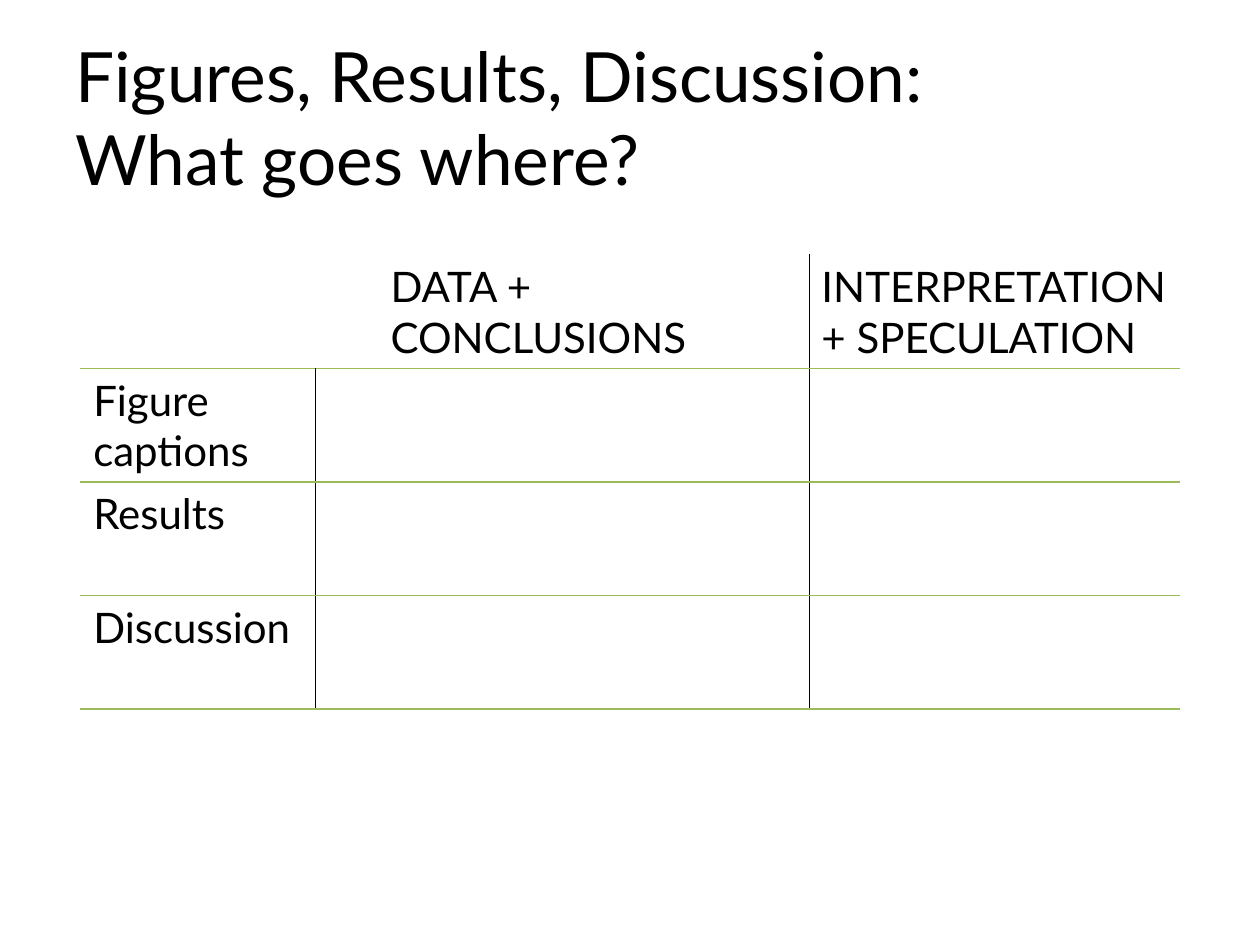
from lxml import etree
from pptx import Presentation
from pptx import util as u
from pptx.dml import color
from pptx.enum import text
from pptx.oxml import ns

WHITE, BLACK, GREEN = "FFFFFF", "000000", "9BBB59"
LETTERING = {"name": "Lato", "bold": False}


def style(font, size):
    for key, value in {**LETTERING, "size": u.Pt(size)}.items():
        setattr(font, key, value)
    font.color.rgb = color.RGBColor.from_string(BLACK)


def add_border(cell, position, side, hue, points):
    properties = cell._tc.get_or_add_tcPr()
    line = etree.Element(ns.qn(f"a:ln{side}"), w=str(u.Pt(points)))
    fill = etree.SubElement(line, ns.qn("a:solidFill"))
    etree.SubElement(fill, ns.qn("a:srgbClr"), val=hue)
    properties.insert(position, line)


deck = Presentation()
deck.slide_width, deck.slide_height = u.Inches(10), u.Inches(7.5)
W, H = deck.slide_width, deck.slide_height
slide = deck.slides.add_slide(deck.slide_layouts[6])

heading = slide.shapes.add_textbox(
    int(W * 0.05), int(H * 0.04), int(W * 0.9), int(H / 6)
).text_frame
for key, value in {"word_wrap": True, "vertical_anchor": text.MSO_ANCHOR.MIDDLE}.items():
    setattr(heading, key, value)
heading.text = "Figures, Results, Discussion:\vWhat goes where?"
style(heading.paragraphs[0].font, 39.6)

sections = [
    ["", "DATA + CONCLUSIONS", "INTERPRETATION + SPECULATION"],
    ["Figure captions", "", ""],
    ["Results", "", ""],
    ["Discussion", "", ""],
]
column_shares = [0.186, 0.392, 0.294]
row_share = 0.12
last_row, last_column = len(sections) - 1, len(column_shares) - 1

matrix = slide.shapes.add_table(
    len(sections), len(column_shares),
    int(W * 0.064), int(H * 0.27),
    int(W * sum(column_shares)), int(H * row_share * len(sections)),
).table
for flag in ("first_row", "horz_banding"):
    setattr(matrix, flag, False)
for column, share in zip(matrix.columns, column_shares):
    column.width = int(W * share)

for r, labels in enumerate(sections):
    matrix.rows[r].height = int(H * row_share)
    for c, label in enumerate(labels):
        cell = matrix.cell(r, c)
        cell.text = label
        style(cell.text_frame.paragraphs[0].font, 24)
        cell.vertical_anchor = text.MSO_ANCHOR.TOP if r else text.MSO_ANCHOR.MIDDLE
        if r == 0 or c == 0:
            cell.fill.solid()
            cell.fill.fore_color.rgb = color.RGBColor.from_string(WHITE)
        else:
            cell.fill.background()
        divider, outside, rule = (BLACK, 0.25), (WHITE, 1), (GREEN, 1)
        borders = {
            "L": outside if c == 0 or (r == 0 and c == 1) else divider,
            "R": outside if c == last_column or r == c == 0 else divider,
            "T": rule if r else outside,
            "B": rule,
        }
        for position, (side, (hue, points)) in enumerate(borders.items()):
            add_border(cell, position, side, hue, points)

indented = matrix.cell(0, 1).text_frame.paragraphs[0]._p.get_or_add_pPr()
for key, value in {"marL": u.Inches(0.5), "indent": 0, "lvl": 1}.items():
    indented.set(key, str(int(value)))

deck.save("out.pptx")
